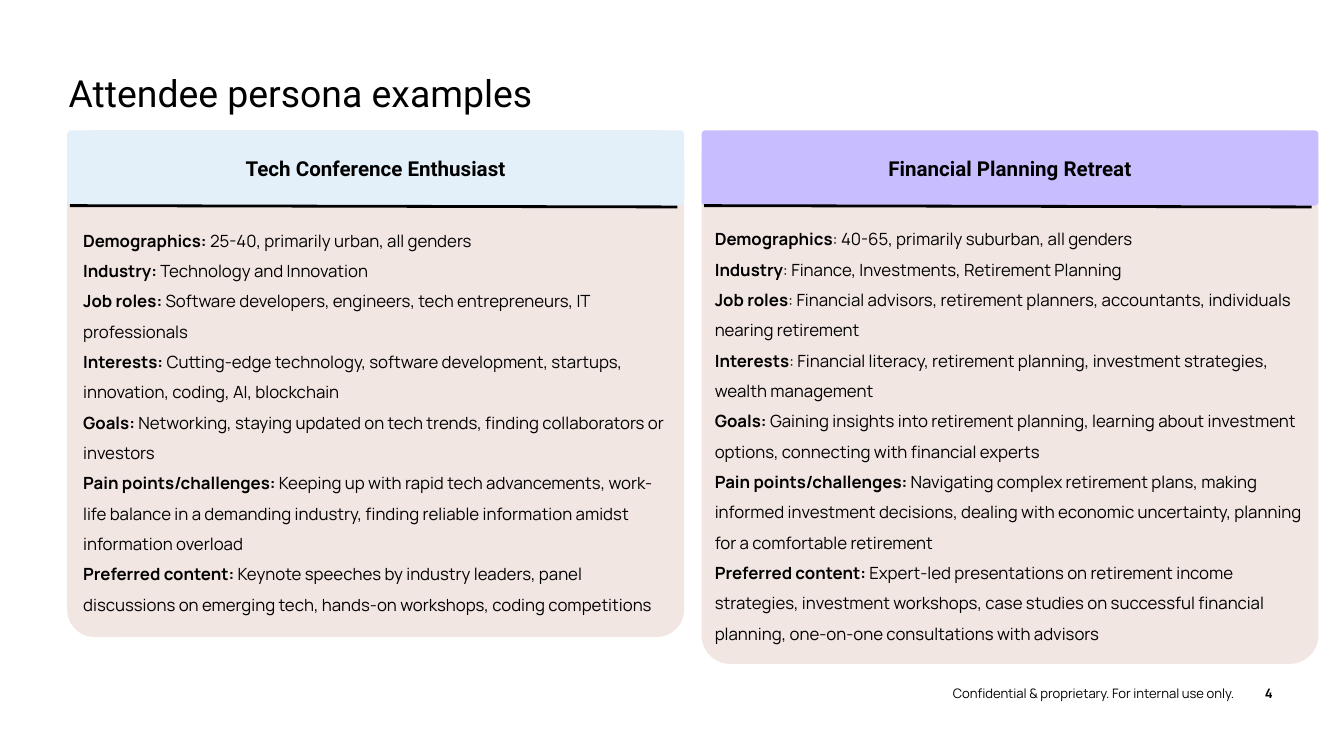
"""Build the attendee persona slide with two side-by-side persona cards."""
from lxml import etree
from pptx import Presentation
from pptx import util as u
from pptx.dml.color import RGBColor
from pptx.enum import shapes, text
from pptx.oxml.ns import qn

TITLE = "Attendee persona examples"
FOOTER = "Confidential & proprietary. For internal use only."
PAGE = "4"
PERSONAS = [
    {
        "name": "Tech Conference Enthusiast", "accent": "sky",
        "height": 3.77, "body_left": 0.02, "body_top": 1.54, "body_height": 3.08,
        "facts": [
            ("Demographics:", " 25-40, primarily urban, all genders"),
            ("Industry: ", "Technology and Innovation"),
            ("Job roles: ", "Software developers, engineers, tech entrepreneurs, IT professionals"),
            ("Interests: ", "Cutting-edge technology, software development, startups, "
             "innovation, coding, AI, blockchain"),
            ("Goals: ", "Networking, staying updated on tech trends, finding collaborators "
             "or investors"),
            ("Pain points/challenges: ", "Keeping up with rapid tech advancements, work-life "
             "balance in a demanding industry, finding reliable information amidst "
             "information overload"),
            ("Preferred content: ", "Keynote speeches by industry leaders, panel discussions "
             "on emerging tech, hands-on workshops, coding competitions"),
        ],
    },
    {
        "name": "Financial Planning Retreat", "accent": "lilac",
        "height": 3.97, "body_left": 0, "body_top": 1.53, "body_height": 3.31,
        "facts": [
            ("Demographics", ": 40-65, primarily suburban, all genders"),
            ("Industry", ": Finance, Investments, Retirement Planning"),
            ("Job roles", ": Financial advisors, retirement planners, accountants, "
             "individuals nearing retirement"),
            ("Interests", ": Financial literacy, retirement planning, investment "
             "strategies, wealth management"),
            ("Goals:", " Gaining insights into retirement planning, learning about "
             "investment options, connecting with financial experts"),
            ("Pain points/challenges:", " Navigating complex retirement plans, making "
             "informed investment decisions, dealing with economic uncertainty, planning "
             "for a comfortable retirement"),
            ("Preferred content:", " Expert-led presentations on retirement income "
             "strategies, investment workshops, case studies on successful financial "
             "planning, one-on-one consultations with advisors"),
        ],
    },
]

THEME = {
    "colors": {"ink": "000000", "card": "F2E6E3", "sky": "E3F0FA", "lilac": "C8BEFF"},
    "fonts": {
        "title": {"name": "Roboto", "size": u.Pt(20), "bold": False},
        "header": {"name": "Roboto", "size": u.Pt(11), "bold": True},
        "label": {"name": "Manrope", "size": u.Pt(9), "bold": True},
        "body": {"name": "Manrope", "size": u.Pt(9), "bold": False},
        "footer": {"name": "Manrope", "size": u.Pt(7), "bold": False},
        "page": {"name": "Manrope", "size": u.Pt(7), "bold": True},
    },
}
SLIDE_WIDTH = u.Inches(10)
SLIDE_HEIGHT = SLIDE_WIDTH * 9 // 16
LEFT, TOP, WIDTH, PITCH = 0.5, 0.97, 4.59, 4.72
HEADER_HEIGHT, CORNER, PAD = 0.56, 0.054, 0.1


def color(key):
    """Return a theme colour."""
    return RGBColor.from_string(THEME["colors"][key])


def set_attrs(obj, values):
    """Set each named attribute on an object."""
    for name, value in values.items():
        setattr(obj, name, value)


def frame(sp, inset, **values):
    """Format the text frame of a shape and return it."""
    tf = sp.text_frame
    margins = {f"margin_{side}": u.Inches(inset) for side in ("left", "top", "right", "bottom")}
    set_attrs(tf, {"word_wrap": True, **margins, **values})
    return tf


def write(p, runs, **values):
    """Write styled runs into a paragraph."""
    set_attrs(p, values)
    for content, style in runs:
        r = p.add_run()
        r.text = content
        set_attrs(r.font, THEME["fonts"][style])
        r.font.color.rgb = color("ink")


def add_text(slide, box, paragraphs, inset=0, **values):
    """Add a text box holding paragraphs of styled runs."""
    tf = frame(slide.shapes.add_textbox(*map(u.Inches, box)), inset)
    for i, runs in enumerate(paragraphs):
        write(tf.add_paragraph() if i else tf.paragraphs[0], runs, **values)


def add_panel(slide, box, fill):
    """Add a borderless rounded panel."""
    sp = slide.shapes.add_shape(shapes.MSO_SHAPE.ROUNDED_RECTANGLE, *map(u.Inches, box))
    sp.adjustments[0] = CORNER
    sp.shadow.inherit = False
    sp.fill.solid()
    sp.fill.fore_color.rgb = color(fill)
    sp.line.fill.background()
    return sp


def add_rule(slide, *ends):
    """Add the dark rule below a card header."""
    line = slide.shapes.add_connector(shapes.MSO_CONNECTOR.STRAIGHT, *map(u.Inches, ends))
    line.line.color.rgb = color("ink")
    line.line.width = u.Pt(1.5)
    etree.SubElement(line._element.spPr, qn("a:effectLst"))


def add_card(slide, left, persona):
    """Add one persona card with header, rule and facts."""
    add_panel(slide, (left, TOP, WIDTH, persona["height"]), "card")
    header = add_panel(slide, (left, TOP, WIDTH, HEADER_HEIGHT), persona["accent"])
    tf = frame(header, PAD, vertical_anchor=text.MSO_ANCHOR.MIDDLE)
    write(tf.paragraphs[0], [(persona["name"], "header")], alignment=text.PP_ALIGN.CENTER)
    rule_y = TOP + HEADER_HEIGHT
    add_rule(slide, left + 0.02, rule_y, left + 4.54, rule_y + 0.01)
    box = (left + persona["body_left"], persona["body_top"], WIDTH, persona["body_height"])
    facts = [[(label, "label"), (detail, "body")] for label, detail in persona["facts"]]
    add_text(slide, box, facts, PAD, line_spacing=1.5)


def main():
    """Build and save the slide."""
    prs = Presentation()
    set_attrs(prs, {"slide_width": SLIDE_WIDTH, "slide_height": SLIDE_HEIGHT})
    slide = prs.slides.add_slide(prs.slide_layouts[6])
    add_text(slide, (9.32, 5.1, 0.15, 0.12), [[(PAGE, "page")]],
             alignment=text.PP_ALIGN.RIGHT)
    add_text(slide, (7.09, 5.1, 2.15, 0.12), [[(FOOTER, "footer")]])
    add_text(slide, (0.51, 0.52, 4.39, 0.44), [[(TITLE, "title")]])
    for i, persona in enumerate(PERSONAS):
        add_card(slide, LEFT + i * PITCH, persona)
    prs.save("out.pptx")


if __name__ == "__main__":
    main()
